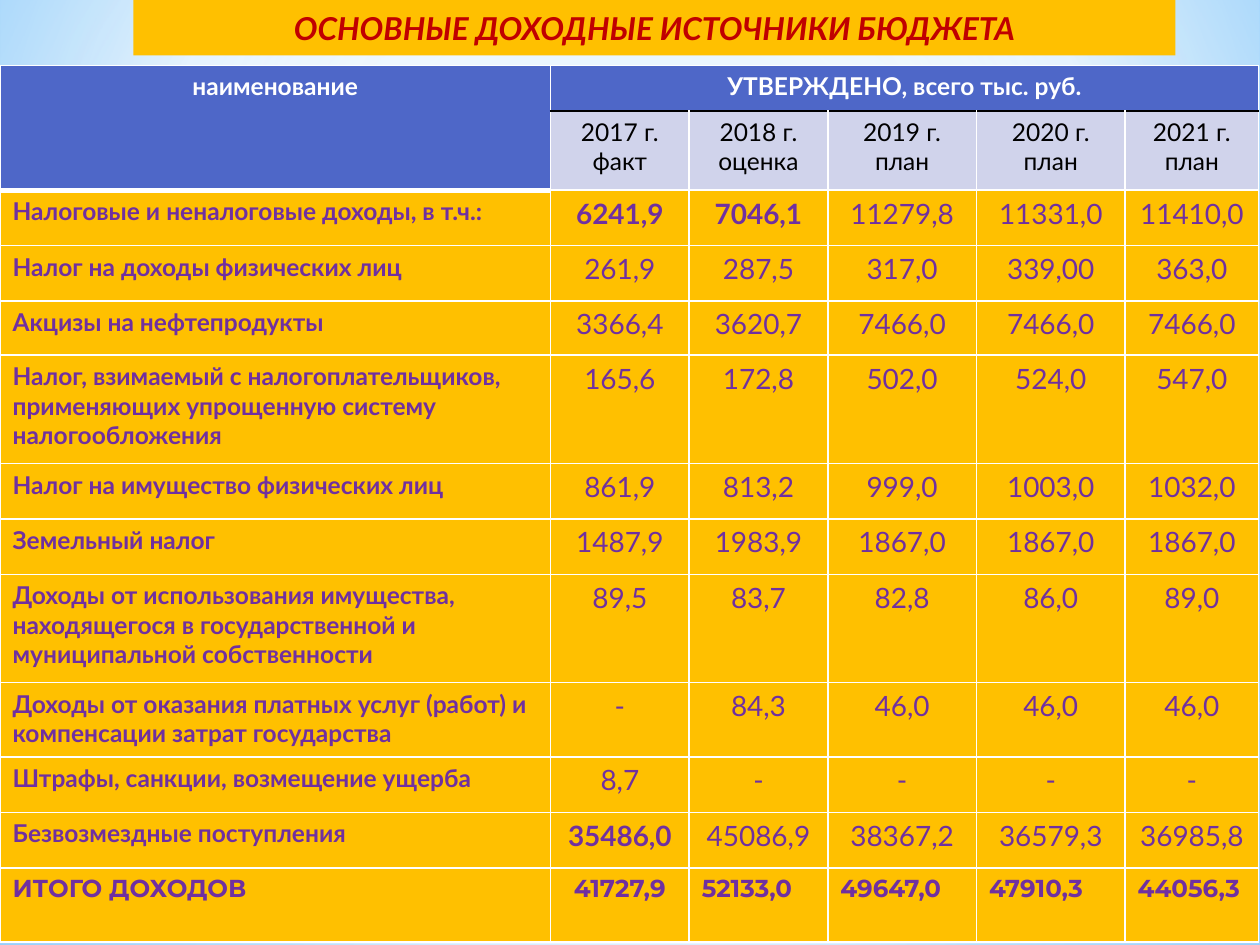
from lxml import etree
from pptx import Presentation
from pptx.dml.color import RGBColor
from pptx.enum import shapes, text
from pptx.oxml import ns
from pptx.util import Inches, Pt

WHITE = RGBColor(0xFF, 0xFF, 0xFF)
BLACK = RGBColor(0, 0, 0)
GOLD = RGBColor(0xFF, 0xC0, 0)
RED = RGBColor(0xC0, 0, 0)
PURPLE = RGBColor(0x70, 0x30, 0xA0)
BLUE = RGBColor(0x4E, 0x67, 0xC8)
LAVENDER = RGBColor(0xD0, 0xD3, 0xEB)
SKY = RGBColor(0x9E, 0xD5, 0xFF)
DEEP_SKY = RGBColor(0x5B, 0xB9, 0xFF)
PALE_BLUE = RGBColor(0xB4, 0xDC, 0xFA)

BODY_FONT = "Lato"
TOTAL_FONT = "Montserrat"

COLUMN_WIDTHS = [4.37, 1.1, 1.1, 1.18, 1.18, 1.06]
ROW_HEIGHTS = [0.36, 0.63, 0.44, 0.44, 0.43, 0.86, 0.44, 0.44, 0.86, 0.59, 0.44, 0.44, 0.59]
YEARS = ["2017 г. факт", "2018 г. оценка", "2019 г. план", "2020 г. план", "2021 г. план"]
# Name, number of leading bold values, values by year
INCOME = [
    ("Налоговые и неналоговые доходы, в т.ч.:", 2, "6241,9 7046,1 11279,8 11331,0 11410,0"),
    ("Налог на доходы физических лиц", 0, "261,9 287,5 317,0 339,00 363,0"),
    ("Акцизы на нефтепродукты", 0, "3366,4 3620,7 7466,0 7466,0 7466,0"),
    ("Налог, взимаемый с налогоплательщиков, применяющих упрощенную систему налогообложения",
     0, "165,6 172,8 502,0 524,0 547,0"),
    ("Налог на имущество физических лиц", 0, "861,9 813,2 999,0 1003,0 1032,0"),
    ("Земельный налог", 0, "1487,9 1983,9 1867,0 1867,0 1867,0"),
    ("Доходы от использования имущества, находящегося в государственной и "
     "муниципальной собственности", 0, "89,5 83,7 82,8 86,0 89,0"),
    ("Доходы от оказания платных услуг (работ) и компенсации затрат государства",
     0, "- 84,3 46,0 46,0 46,0"),
    ("Штрафы, санкции, возмещение ущерба", 0, "8,7 - - - -"),
    ("Безвозмездные поступления", 1, "35486,0 45086,9 38367,2 36579,3 36985,8"),
]
TOTALS = "41727,9 52133,0 49647,0 47910,3 44056,3"


def add_element(parent, tag, **attributes):
    element = etree.SubElement(parent, ns.qn(tag))
    for name, value in attributes.items():
        element.set(name, str(value))
    return element


def apply_gradient(fill, properties, stops, focus=None):
    """Stops are (percent, colour, opacity); focus is the inner rectangle of a
    circular gradient in percent, and without it the gradient runs downwards."""
    fill.gradient()
    gradient = properties.find(ns.qn("a:gradFill"))
    for child in list(gradient):
        gradient.remove(child)
    stop_list = add_element(gradient, "a:gsLst")
    for position, color, opacity in stops:
        stop = add_element(stop_list, "a:gs", pos=position * 1000)
        color_element = add_element(stop, "a:srgbClr", val=color)
        if opacity < 100:
            add_element(color_element, "a:alpha", val=opacity * 1000)
    if focus:
        circle = add_element(gradient, "a:path", path="circle")
        sides = {side: value * 1000 for side, value in zip("ltrb", focus)}
        add_element(circle, "a:fillToRect", **sides)
    else:
        add_element(gradient, "a:lin", ang=90 * 60000, scaled=0)


def add_backdrop(slide):
    fill = slide.background.fill
    fill.gradient()
    properties = slide.background._cSld.find(".//" + ns.qn("p:bgPr"))
    apply_gradient(fill, properties,
                   [(0, SKY, 100), (60, WHITE, 100), (100, DEEP_SKY, 100)], (20, 10, 20, 60))
    center = (50, 50, 50, 50)
    rectangle, oval = shapes.MSO_SHAPE.RECTANGLE, shapes.MSO_SHAPE.OVAL
    layers = [
        (rectangle, 5.58, 1.92, center,
         [(0, WHITE, 91), (37, WHITE, 76), (100, PALE_BLUE, 79)]),
        (rectangle, 0, 5.58, center,
         [(0, WHITE, 89), (48, WHITE, 62), (100, PALE_BLUE, 79)]),
        (rectangle, 4.12, 2.5, None,
         [(0, WHITE, 0), (29, WHITE, 30), (45, PALE_BLUE, 40), (55, WHITE, 26),
          (65, PALE_BLUE, 60), (100, WHITE, 0)]),
        (oval, 1.75, 5.58, center, [(0, WHITE, 100), (56, WHITE, 0)]),
    ]
    for kind, top, height, focus, stops in layers:
        layer = slide.shapes.add_shape(kind, 0, Inches(top), Inches(10), Inches(height))
        layer.shadow.inherit = False
        layer.line.fill.background()
        apply_gradient(layer.fill, layer._element.spPr, stops, focus)


def write(frame, content, size, color, bold=True, italic=False, centered=True, font=BODY_FONT):
    paragraph = frame.paragraphs[0]
    paragraph.alignment = text.PP_ALIGN.CENTER if centered else text.PP_ALIGN.LEFT
    run = paragraph.add_run()
    run.text = content
    run.font.name, run.font.size = font, Pt(size)
    run.font.bold, run.font.italic = bold, italic
    run.font.color.rgb = color


def add_title(slide, left, top, width, height):
    title = slide.shapes.add_textbox(left, top, width, height)
    title.fill.solid()
    title.fill.fore_color.rgb = GOLD
    title.text_frame.word_wrap = True
    title.text_frame.vertical_anchor = text.MSO_ANCHOR.MIDDLE
    write(title.text_frame, "ОСНОВНЫЕ ДОХОДНЫЕ ИСТОЧНИКИ БЮДЖЕТА", 18, RED, italic=True)


def style_cell(cell, color, **borders):
    """Fill the cell and draw thin white borders, except the (colour, width)
    pairs given by side letter."""
    properties = cell._tc.get_or_add_tcPr()
    for side in "LRTB":
        line_color, width = borders.get(side, (WHITE, 1))
        line = add_element(properties, "a:ln" + side, w=Pt(width))
        add_element(add_element(line, "a:solidFill"), "a:srgbClr", val=line_color)
    cell.fill.solid()
    cell.fill.fore_color.rgb = color


def fill_header(table):
    for row in range(2):
        style_cell(table.cell(row, 0), BLUE, B=(WHITE, 3))
    for column, year in enumerate(YEARS, 1):
        style_cell(table.cell(0, column), BLUE, B=(BLACK, 1))
        style_cell(table.cell(1, column), LAVENDER, T=(BLACK, 1))
        write(table.cell(1, column).text_frame, year, 14, BLACK, bold=False)
    table.cell(0, 0).merge(table.cell(1, 0))
    table.cell(0, 1).merge(table.cell(0, len(YEARS)))
    write(table.cell(0, 0).text_frame, "наименование", 14, WHITE)
    write(table.cell(0, 1).text_frame, "УТВЕРЖДЕНО, всего тыс. руб.", 14, WHITE)


def fill_body(table):
    for row, (name, bold_count, values) in enumerate(INCOME, 2):
        write(table.cell(row, 0).text_frame, name, 14, PURPLE, centered=False)
        for column, value in enumerate(values.split(), 1):
            write(table.cell(row, column).text_frame, value, 16, PURPLE,
                  bold=column <= bold_count)
    total_row = len(ROW_HEIGHTS) - 1
    for column, value in enumerate(["ИТОГО ДОХОДОВ", *TOTALS.split()]):
        write(table.cell(total_row, column).text_frame, value, 14, PURPLE,
              centered=column == 1, font=TOTAL_FONT)
    for row in range(2, len(ROW_HEIGHTS)):
        for column in range(len(COLUMN_WIDTHS)):
            style_cell(table.cell(row, column), GOLD)


def add_income_table(slide, left, top, width, height):
    table = slide.shapes.add_table(len(ROW_HEIGHTS), len(COLUMN_WIDTHS),
                                   left, top, width, height).table
    for column, column_width in zip(table.columns, COLUMN_WIDTHS):
        column.width = Inches(column_width)
    for row, row_height in zip(table.rows, ROW_HEIGHTS):
        row.height = Inches(row_height)
    fill_header(table)
    fill_body(table)


def main():
    presentation = Presentation()
    presentation.slide_width, presentation.slide_height = Inches(10), Inches(7.5)
    slide = presentation.slides.add_slide(presentation.slide_layouts[6])
    add_backdrop(slide)
    add_title(slide, Inches(1.06), 0, Inches(8.27), Inches(0.44))
    add_income_table(slide, 0, Inches(0.52), Inches(10), Inches(6.98))
    presentation.save("out.pptx")


if __name__ == "__main__":
    main()
